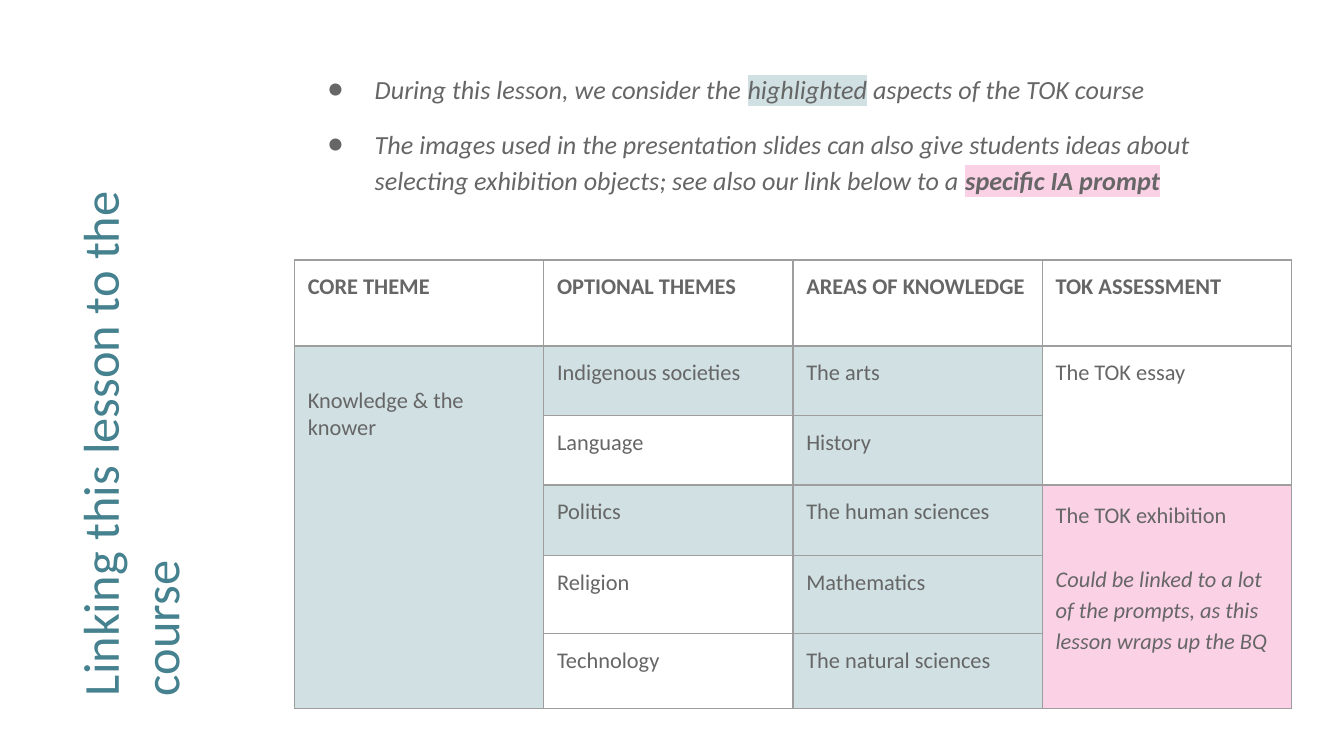
from lxml import etree
from pptx import Presentation
from pptx.dml.color import RGBColor
from pptx.enum.text import MSO_ANCHOR, MSO_AUTO_SIZE, PP_ALIGN
from pptx.oxml.ns import qn
from pptx.util import Pt

TOP = MSO_ANCHOR.TOP
NO_AUTOFIT = MSO_AUTO_SIZE.NONE
LEFT = PP_ALIGN.LEFT
PX = 4572
MARGIN = 20 * PX
COLORS = {
    "title": "45818E",
    "text": "666666",
    "teal": "D0E0E3",
    "pink": "FBD1E6",
    "white": "FFFFFF",
    "border": "9E9E9E",
}


def add_run(paragraph, text, size=12, color="text", bold=False, italic=False, highlight=None):
    run = paragraph.add_run()
    run.text = text
    font = run.font
    font.size = Pt(size)
    font.bold = bold
    font.italic = italic
    font.color.rgb = RGBColor.from_string(COLORS[color])
    if highlight:
        mark = etree.SubElement(run._r.get_or_add_rPr(), qn("a:highlight"))
        etree.SubElement(mark, qn("a:srgbClr"), val=COLORS[highlight])
    font.name = "Calibri"


def add_borders(cell):
    properties = cell._tc.get_or_add_tcPr()
    for side in ("lnL", "lnR", "lnT", "lnB"):
        line = etree.SubElement(properties, qn(f"a:{side}"), w=str(Pt(0.75)))
        fill = etree.SubElement(line, qn("a:solidFill"))
        etree.SubElement(fill, qn("a:srgbClr"), val=COLORS["border"])


presentation = Presentation()
presentation.slide_width = 2000 * PX
presentation.slide_height = 1125 * PX
slide = presentation.slides.add_slide(presentation.slide_layouts[5])

title = slide.shapes.title
title.left, title.top, title.width, title.height = (n * PX for n in (-263, 427, 974, 284))
title.rotation = 270
notes_box = slide.shapes.add_textbox(438 * PX, 82 * PX, 1494 * PX, 244 * PX)
for shape in (title, notes_box):
    frame = shape.text_frame
    frame.word_wrap = True
    frame.auto_size = NO_AUTOFIT
    frame.vertical_anchor = TOP
    frame.margin_left = frame.margin_right = MARGIN
    frame.margin_top = frame.margin_bottom = MARGIN

heading = title.text_frame.paragraphs[0]
heading.alignment = LEFT
add_run(heading, "Linking this lesson to the course", size=27, color="title")

bullets = [
    [
        ("During this lesson, we consider the ", {}),
        ("highlighted", {"highlight": "teal"}),
        (" aspects of the TOK course", {}),
    ],
    [
        ("The images used in the presentation slides can also give students ideas about "
         "selecting exhibition objects; see also our link below to a ", {}),
        ("specific IA prompt", {"bold": True, "highlight": "pink"}),
    ],
]
frame = notes_box.text_frame
for index, runs in enumerate(bullets):
    paragraph = frame.add_paragraph() if index else frame.paragraphs[0]
    properties = paragraph._p.get_or_add_pPr()
    properties.set("marL", str(100 * PX))
    properties.set("indent", str(-70 * PX))
    bullet_color = etree.SubElement(properties, qn("a:buClr"))
    etree.SubElement(bullet_color, qn("a:srgbClr"), val=COLORS["text"])
    etree.SubElement(properties, qn("a:buFont"), typeface="Calibri")
    etree.SubElement(properties, qn("a:buChar"), char="●")
    paragraph.line_spacing = 1.15
    if index:
        paragraph.space_before = Pt(10)
    for text, style in runs:
        add_run(paragraph, text, size=14, italic=True, **style)

rows = [
    [("CORE THEME", "white"), ("OPTIONAL THEMES", "white"),
     ("AREAS OF KNOWLEDGE", "white"), ("TOK ASSESSMENT", "white")],
    [("Knowledge & the knower", "teal"), ("Indigenous societies", "teal"),
     ("The arts", "teal"), ("The TOK essay", None)],
    [("", "teal"), ("Language", None), ("History", "teal"), ("", None)],
    [("", "teal"), ("Politics", "teal"), ("The human sciences", "teal"),
     ("The TOK exhibition", "pink")],
    [("", "teal"), ("Religion", None), ("Mathematics", "teal"), ("", "pink")],
    [("", "teal"), ("Technology", None), ("The natural sciences", "teal"), ("", "pink")],
]
row_heights = [128, 104, 103, 105, 116, 112]
column_width = 371

table = slide.shapes.add_table(
    len(rows), 4, 438 * PX, 387 * PX, 4 * column_width * PX, sum(row_heights) * PX
).table
table.first_row = False
table.horz_banding = False
for column in table.columns:
    column.width = column_width * PX
for row_index, row in enumerate(rows):
    table.rows[row_index].height = row_heights[row_index] * PX
    for column_index, (text, fill) in enumerate(row):
        cell = table.cell(row_index, column_index)
        cell.margin_left = cell.margin_right = MARGIN
        cell.margin_top = cell.margin_bottom = MARGIN
        cell.vertical_anchor = TOP
        add_borders(cell)
        if fill:
            cell.fill.solid()
            cell.fill.fore_color.rgb = RGBColor.from_string(COLORS[fill])
        else:
            cell.fill.background()
        if text:
            add_run(cell.text_frame.paragraphs[0], text, bold=row_index == 0)

for first_row, last_row, column_index in ((1, 5, 0), (1, 2, 3), (3, 5, 3)):
    table.cell(first_row, column_index).merge(table.cell(last_row, column_index))

table.cell(1, 0).margin_top = 61 * PX

exhibition = table.cell(3, 3).text_frame
remark = exhibition.add_paragraph()
add_run(remark, "Could be linked to a lot of the prompts, as this lesson wraps up the BQ", italic=True)
for paragraph in exhibition.paragraphs:
    paragraph.line_spacing = 1.15
remark.space_before = Pt(17)

presentation.save("out.pptx")
